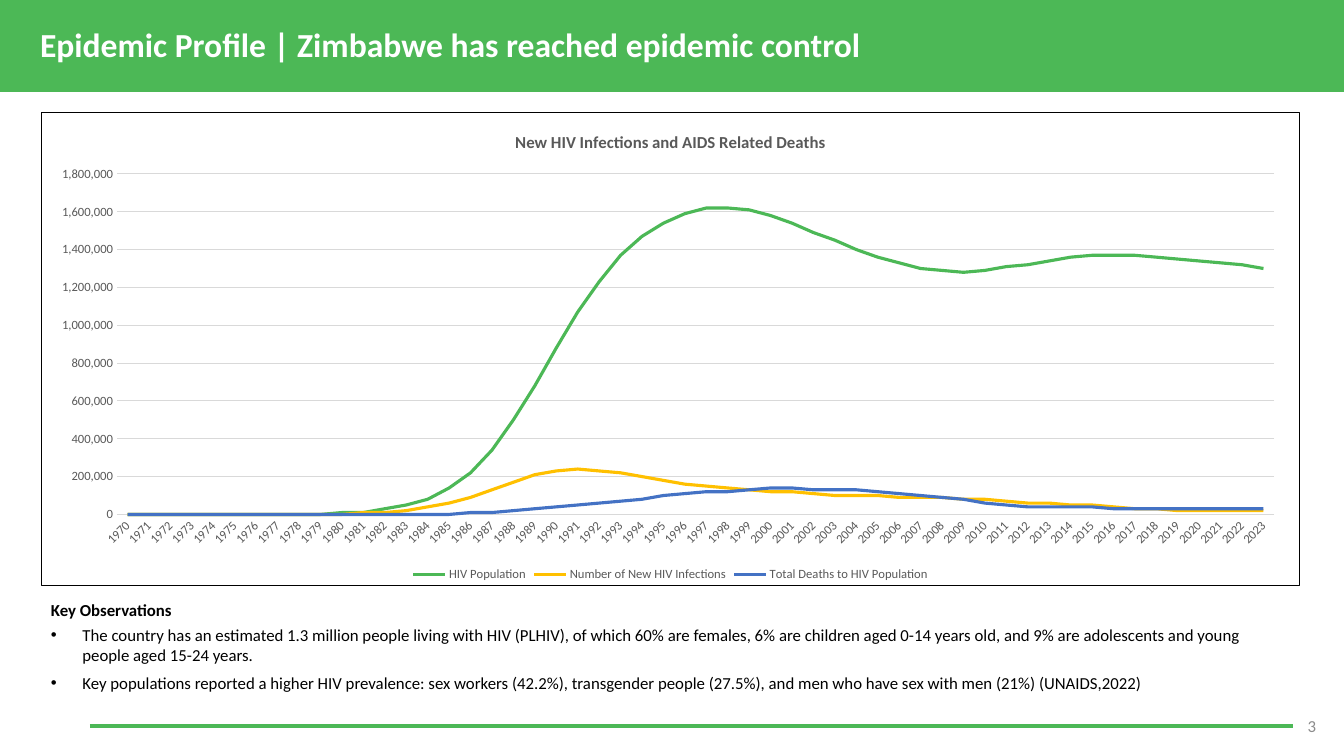
from lxml import etree
from pptx import Presentation
from pptx import util as u
from pptx.chart.data import CategoryChartData
from pptx.dml.color import RGBColor
from pptx.enum import chart as ch, shapes, text
from pptx.oxml import parse_xml
from pptx.oxml.ns import nsdecls, qn

SCALE = 914400 / 100.8
INK = {"green": "4CB856", "gold": "FFC000", "blue": "4472C4", "white": "FFFFFF",
       "black": "000000", "gray": "595959", "pale": "D9D9D9", "page": "8C8C8C"}


def px(*nums):
    return [u.Emu(round(n * SCALE)) for n in nums]


def style(font, size=12, color="black", bold=False):
    font.name, font.size, font.bold = "Calibri", u.Pt(size), bold
    font.color.rgb = RGBColor.from_string(INK[color])


prs = Presentation()
prs.slide_width, prs.slide_height = px(1344, 756)
slide = prs.slides.add_slide(prs.slide_layouts[5])

# Title band
title = slide.shapes.title
title.left, title.top, title.width, title.height = px(0, -3, 1344, 95)
title.fill.solid()
title.fill.fore_color.rgb = RGBColor.from_string(INK["green"])
frame = title.text_frame
frame.auto_size = text.MSO_AUTO_SIZE.NONE
frame.vertical_anchor = text.MSO_ANCHOR.MIDDLE
para = frame.paragraphs[0]
para.text = "Epidemic Profile | Zimbabwe has reached epidemic control"
para.alignment = text.PP_ALIGN.LEFT
para._p.get_or_add_pPr().set("marL", str(px(30)[0]))
style(para.runs[0].font, 24, "white", True)

# Key observations
box = slide.shapes.add_textbox(*px(41, 595, 1259, 105))
frame = box.text_frame
frame.word_wrap = True
notes = [
    "Key Observations",
    "The country has an estimated 1.3 million people living with HIV (PLHIV), of which 60% are "
    "females, 6% are children aged 0-14 years old, and 9% are adolescents and young people "
    "aged 15-24 years.",
    "Key populations reported a higher HIV prevalence: sex workers (42.2%), transgender people "
    "(27.5%), and men who have sex with men (21%) (UNAIDS,2022)",
]
for i, note in enumerate(notes):
    para = frame.paragraphs[0] if i == 0 else frame.add_paragraph()
    para.space_after = u.Pt(6 if i else 3)
    if i:
        props = para._p.get_or_add_pPr()
        props.set("marL", "285750")
        props.set("indent", "-285750")
        etree.SubElement(props, qn("a:buFont")).set("typeface", "Arial")
        etree.SubElement(props, qn("a:buChar")).set("char", "•")
    run = para.add_run()
    run.text = note
    style(run.font, bold=i == 0)

# Page number and footer rule
page = slide.shapes.add_textbox(*px(1024, 706, 302, 40))
page.text_frame.word_wrap = True
page.text_frame.vertical_anchor = text.MSO_ANCHOR.MIDDLE
para = page.text_frame.paragraphs[0]
para.text = "3"
para.alignment = text.PP_ALIGN.RIGHT
style(para.runs[0].font, 12, "page")

rule = slide.shapes.add_connector(shapes.MSO_CONNECTOR.STRAIGHT, *px(90, 726, 1293, 726))
rule.line.color.rgb = RGBColor.from_string(INK["green"])
rule.line.width = u.Pt(3)
etree.SubElement(rule._element.spPr, qn("a:effectLst"))

# Chart values, in units of 10,000 people
series = {
    "HIV Population": ("green", [0] * 10 + [
        1, 1, 3, 5, 8, 14, 22, 34, 50, 68, 88, 107, 123, 137, 147, 154, 159, 162, 162, 161, 158,
        154, 149, 145, 140, 136, 133, 130, 129, 128, 129, 131, 132, 134, 136, 137, 137, 137, 136,
        135, 134, 133, 132, 130]),
    "Number of New HIV Infections": ("gold", [0] * 11 + [
        1, 1, 2, 4, 6, 9, 13, 17, 21, 23, 24, 23, 22, 20, 18, 16, 15, 14, 13, 12, 12, 11, 10, 10,
        10, 9, 9, 9, 8, 8, 7, 6, 6, 5, 5, 4, 3, 3, 2, 2, 2, 2, 2]),
    "Total Deaths to HIV Population": ("blue", [0] * 16 + [
        1, 1, 2, 3, 4, 5, 6, 7, 8, 10, 11, 12, 12, 13, 14, 14, 13, 13, 13, 12, 11, 10, 9, 8, 6, 5,
        4, 4, 4, 4] + [3] * 8),
}
data = CategoryChartData(number_format="#,##0")
data.categories = [str(year) for year in range(1970, 2024)]
for name, (_, vals) in series.items():
    data.add_series(name, [v * 10000 for v in vals])
chart = slide.shapes.add_chart(ch.XL_CHART_TYPE.LINE, *px(41, 112, 1259, 474), data).chart
style(chart.font, 10)

chart.has_title = True
head = chart.chart_title.text_frame
head.text = "New HIV Infections and AIDS Related Deaths"
style(head.paragraphs[0].runs[0].font, 12, "gray", True)
chart.chart_title.include_in_layout = False

chart.has_legend = True
chart.legend.position = ch.XL_LEGEND_POSITION.BOTTOM
chart.legend.include_in_layout = False
style(chart.legend.font, 9, "gray")

plot = chart.plots[0]
plot.vary_by_categories = False
for line, (color, _) in zip(plot.series, series.values()):
    line.smooth = False
    line.marker.style = ch.XL_MARKER_STYLE.NONE
    line.format.line.width = u.Pt(2.25)
    line.format.line.color.rgb = RGBColor.from_string(INK[color])

cat, val = chart.category_axis, chart.value_axis
for axis in (cat, val):
    axis.major_tick_mark = axis.minor_tick_mark = ch.XL_TICK_MARK.NONE
    style(axis.tick_labels.font, 9, "gray")
val.minimum_scale, val.maximum_scale, val.major_unit = 0, 1800000, 200000
val.tick_labels.number_format = "#,##0"
val.tick_labels.number_format_is_linked = False
val.format.line.fill.background()
val.has_major_gridlines = True
for edge in (cat.format.line, val.major_gridlines.format.line):
    edge.color.rgb = RGBColor.from_string(INK["pale"])
    edge.width = u.Pt(0.75)

# Slanted year labels, one for each year
cat._element.find(qn("c:txPr")).find(qn("a:bodyPr")).set("rot", "-2700000")
cat._element.find(qn("c:noMultiLvlLbl")).addprevious(
    parse_xml(f'<c:tickLblSkip {nsdecls("c")} val="1"/>'))

# Plot area place and chart frame
root = chart.element.find(qn("c:chart"))
area = root.find(qn("c:plotArea"))
old = area.find(qn("c:layout"))
if old is not None:
    area.remove(old)
place = "".join(f'<c:{k} val="{v}"/>' for k, v in [
    ("layoutTarget", "inner"), ("xMode", "edge"), ("yMode", "edge"),
    ("x", 0.06), ("y", 0.13), ("w", 0.92), ("h", 0.72)])
area.insert(0, parse_xml(
    f'<c:layout {nsdecls("c")}><c:manualLayout>{place}</c:manualLayout></c:layout>'))
root.addnext(parse_xml(
    f'<c:spPr {nsdecls("c", "a")}><a:noFill/><a:ln w="9525"><a:solidFill>'
    f'<a:srgbClr val="{INK["black"]}"/></a:solidFill></a:ln></c:spPr>'))

prs.save("out.pptx")
